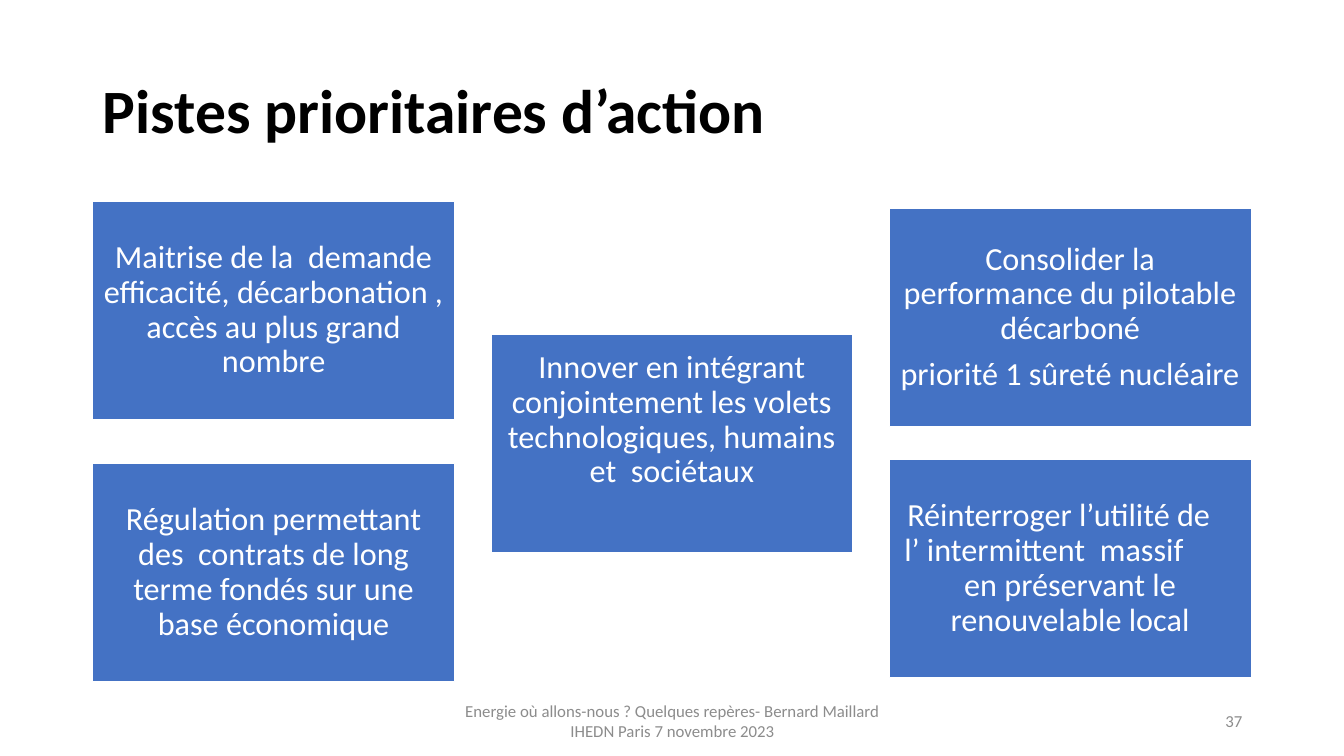
from pptx import Presentation
from pptx.dml.color import RGBColor
from pptx.enum.shapes import MSO_SHAPE
from pptx.enum.text import MSO_ANCHOR, PP_ALIGN
from pptx.util import Inches, Pt

CARD_W, CARD_H = 3.59, 2.16
COLUMNS = [0.92 + i * 3.95 for i in range(3)]
CARD_TEXT = dict(size=23, color="FFFFFF", align=PP_ALIGN.CENTER, line_spacing=0.9, space_after=Pt(8))
FOOTER_TEXT = dict(size=12, color="8C8C8C")
CARDS = [
    (0, 2, ["Maitrise de la  demande efficacité, décarbonation , accès au plus grand nombre"]),
    (0, 4.6, ["Régulation permettant des  contrats de long terme fondés sur une base économique"]),
    (2, 2.07, ["Consolider la performance du pilotable décarboné", "priorité 1 sûreté nucléaire"]),
]


def rgb(value):
    """Return the colour for a hex string."""
    return RGBColor.from_string(value)


def add_paragraph(tf, text, size, color, bold=False, indent=0, **formats):
    """Write one formatted paragraph, reusing the first empty one."""
    p = tf.paragraphs[0] if not tf.text else tf.add_paragraph()
    for name, value in formats.items():
        if name == "align":
            p.alignment = value
        else:
            setattr(p, name, value)
    if indent:
        pPr = p._p.get_or_add_pPr()
        pPr.set("marL", str(Inches(indent)))
        pPr.set("indent", "0")
    r = p.add_run()
    r.text = text
    for name, value in dict(name="Calibri", size=Pt(size), bold=bold).items():
        setattr(r.font, name, value)
    r.font.color.rgb = rgb(color)


def add_text(s, box, text, **formats):
    """Place a vertically centred text box."""
    tf = s.shapes.add_textbox(*map(Inches, box)).text_frame
    tf.word_wrap = True
    tf.vertical_anchor = MSO_ANCHOR.MIDDLE
    add_paragraph(tf, text, **formats)


def add_card(s, left, top, bottom_inset=0.1):
    """Draw one blue card and return its text frame."""
    sp = s.shapes.add_shape(MSO_SHAPE.RECTANGLE, *map(Inches, (left, top, CARD_W, CARD_H)))
    sp.shadow.inherit = False
    sp.fill.solid()
    sp.fill.fore_color.rgb = rgb("4472C4")
    sp.line.color.rgb = rgb("FFFFFF")
    sp.line.width = Pt(1)
    tf = sp.text_frame
    tf.word_wrap = True
    tf.vertical_anchor = MSO_ANCHOR.MIDDLE
    for side in ("left", "top", "right"):
        setattr(tf, f"margin_{side}", Inches(0.1))
    tf.margin_bottom = Inches(bottom_inset)
    return tf


def add_cards(s):
    """Place the five action cards in three columns."""
    for column, top, texts in CARDS:
        tf = add_card(s, COLUMNS[column], top)
        for text in texts:
            add_paragraph(tf, text, **CARD_TEXT)

    innovation = add_card(s, COLUMNS[1], 3.32, bottom_inset=0.56)
    add_paragraph(innovation, "Innover en intégrant conjointement les volets technologiques, "
                  "humains et  sociétaux", **CARD_TEXT)

    intermittent = add_card(s, COLUMNS[2], 4.56)
    left_text = CARD_TEXT | dict(align=PP_ALIGN.LEFT, space_after=Pt(0))
    add_paragraph(intermittent, "Réinterroger l’utilité de", indent=0.08, **left_text)
    add_paragraph(intermittent, "l’ intermittent  massif", indent=0.05, **left_text)
    add_paragraph(intermittent, "en préservant le renouvelable local", **CARD_TEXT)


def add_footer(s, top, height):
    """Place the talk reference and the slide number."""
    add_text(s, (4.42, top, 4.5, height),
             "Energie où allons-nous ? Quelques repères- Bernard Maillard IHEDN Paris 7 novembre 2023",
             align=PP_ALIGN.CENTER, **FOOTER_TEXT)
    add_text(s, (9.42, top, 3, height), "37", align=PP_ALIGN.RIGHT, **FOOTER_TEXT)


def main():
    """Build and save the slide."""
    prs = Presentation()
    prs.slide_width, prs.slide_height = Inches(13.33), Inches(7.5)
    s = prs.slides.add_slide(prs.slide_layouts[6])
    add_text(s, (0.92, 0.4, 11.5, 1.45), "Pistes prioritaires d’action",
             size=44, color="000000", bold=True, line_spacing=0.9)
    add_cards(s)
    add_footer(s, 6.95, 0.4)
    prs.save("out.pptx")


if __name__ == "__main__":
    main()
